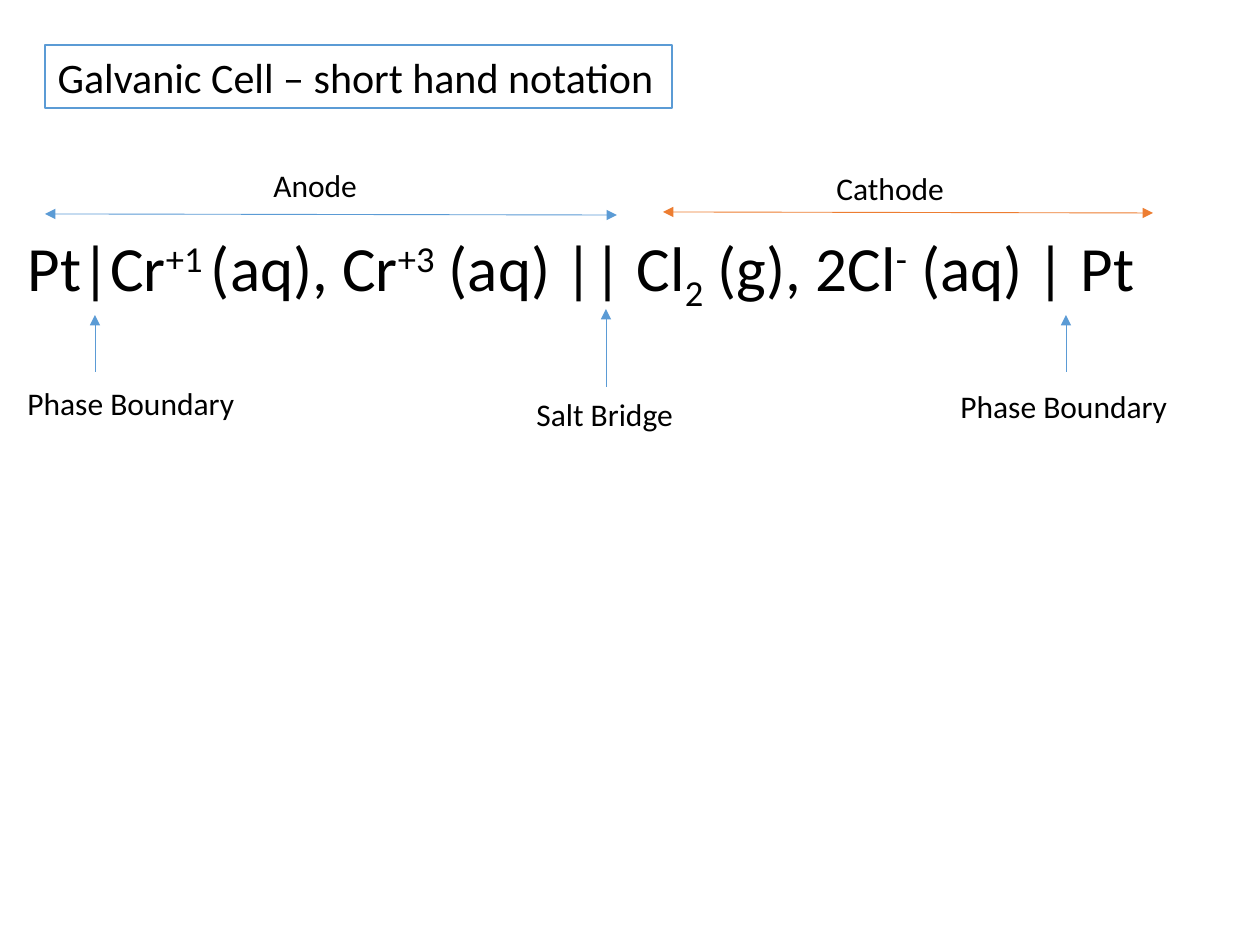
from dataclasses import dataclass

import pptx
import pptx.dml.color
import pptx.enum.shapes
import pptx.enum.text
import pptx.oxml
import pptx.oxml.ns
import pptx.util

EMU_PER_PX = 914400 / 126
BLACK, WHITE, BLUE, ORANGE = "000000", "FFFFFF", "5B9BD5", "ED7D31"
SUPERSCRIPT, SUBSCRIPT = 30000, -25000


@dataclass
class Label:
    text: str
    left: int
    top: int
    width: int


@dataclass
class Arrow:
    start: tuple[int, int]
    end: tuple[int, int]
    color: str = BLUE
    double: bool = False


LABELS = [
    Label("Anode", 261, 160, 110),
    Label("Cathode", 824, 163, 135),
    Label("Salt Bridge", 524, 389, 164),
    Label("Phase Boundary", 15, 378, 234),
    Label("Phase Boundary", 948, 381, 234),
]
ARROWS = [
    Arrow((45, 214), (617, 215), double=True),
    Arrow((663, 212), (1153, 213), ORANGE, double=True),
    Arrow((606, 387), (606, 309)),
    Arrow((95, 372), (95, 315)),
    Arrow((1066, 372), (1066, 315)),
]
NOTATION = [
    ("Pt|Cr", 0),
    ("+1 ", SUPERSCRIPT),
    ("(aq), Cr", 0),
    ("+3", SUPERSCRIPT),
    (" (aq) || Cl", 0),
    ("2", SUBSCRIPT),
    (" (g), 2Cl", 0),
    ("-", SUPERSCRIPT),
    (" (aq) | Pt", 0),
]


def px(length: int) -> int:
    return round(length * EMU_PER_PX)


def rgb(color: str) -> pptx.dml.color.RGBColor:
    return pptx.dml.color.RGBColor.from_string(color)


def add_text(paragraph, text: str, *, size: int, color: str = BLACK, baseline: int = 0) -> None:
    run = paragraph.add_run()
    run.text = text
    run.font.name = "Calibri"
    run.font.size = pptx.util.Pt(size)
    run.font.color.rgb = rgb(color)
    if baseline:
        run._r.get_or_add_rPr().set("baseline", str(baseline))


def add_box(slide, left: int, top: int, width: int, height: int):
    box = slide.shapes.add_textbox(px(left), px(top), px(width), px(height))
    box.text_frame.word_wrap = False
    return box.text_frame.paragraphs[0]


def format_title(title) -> None:
    title.left, title.top, title.width, title.height = map(px, (45, 45, 627, 63))
    title.fill.solid()
    title.fill.fore_color.rgb = rgb(WHITE)
    title.line.color.rgb = rgb(BLUE)
    title.line.width = pptx.util.Pt(1)
    frame = title.text_frame
    frame.word_wrap = False
    frame.auto_size = pptx.enum.text.MSO_AUTO_SIZE.NONE
    frame.vertical_anchor = pptx.enum.text.MSO_ANCHOR.TOP
    heading = frame.paragraphs[0]
    heading.alignment = pptx.enum.text.PP_ALIGN.LEFT
    heading.line_spacing = 1.0
    heading.space_before = pptx.util.Pt(0)
    add_text(heading, "Galvanic Cell – short hand notation", size=24)


def draw_label(slide, label: Label) -> None:
    add_text(add_box(slide, label.left, label.top, label.width, 50), label.text, size=18)


def draw_arrow(slide, arrow: Arrow) -> None:
    connector = slide.shapes.add_connector(
        pptx.enum.shapes.MSO_CONNECTOR.STRAIGHT, *map(px, arrow.start + arrow.end)
    )
    connector.line.color.rgb = rgb(arrow.color)
    connector.line.width = pptx.util.Pt(0.5)
    outline = connector.line._get_or_add_ln()
    for end in ("headEnd", "tailEnd") if arrow.double else ("tailEnd",):
        head = pptx.oxml.parse_xml(f'<a:{end} {pptx.oxml.ns.nsdecls("a")} type="triangle"/>')
        outline.append(head)
    no_effects = pptx.oxml.parse_xml(f'<a:effectLst {pptx.oxml.ns.nsdecls("a")}/>')
    connector._element.spPr.append(no_effects)


def main() -> None:
    presentation = pptx.Presentation()
    presentation.slide_width = px(1260)
    presentation.slide_height = px(945)
    slide = presentation.slides.add_slide(presentation.slide_layouts[5])
    format_title(slide.shapes.title)
    notation = add_box(slide, 15, 222, 1159, 89)
    for text, baseline in NOTATION:
        add_text(notation, text, size=36, baseline=baseline)
    for label in LABELS:
        draw_label(slide, label)
    for arrow in ARROWS:
        draw_arrow(slide, arrow)
    presentation.save("out.pptx")


if __name__ == "__main__":
    main()
